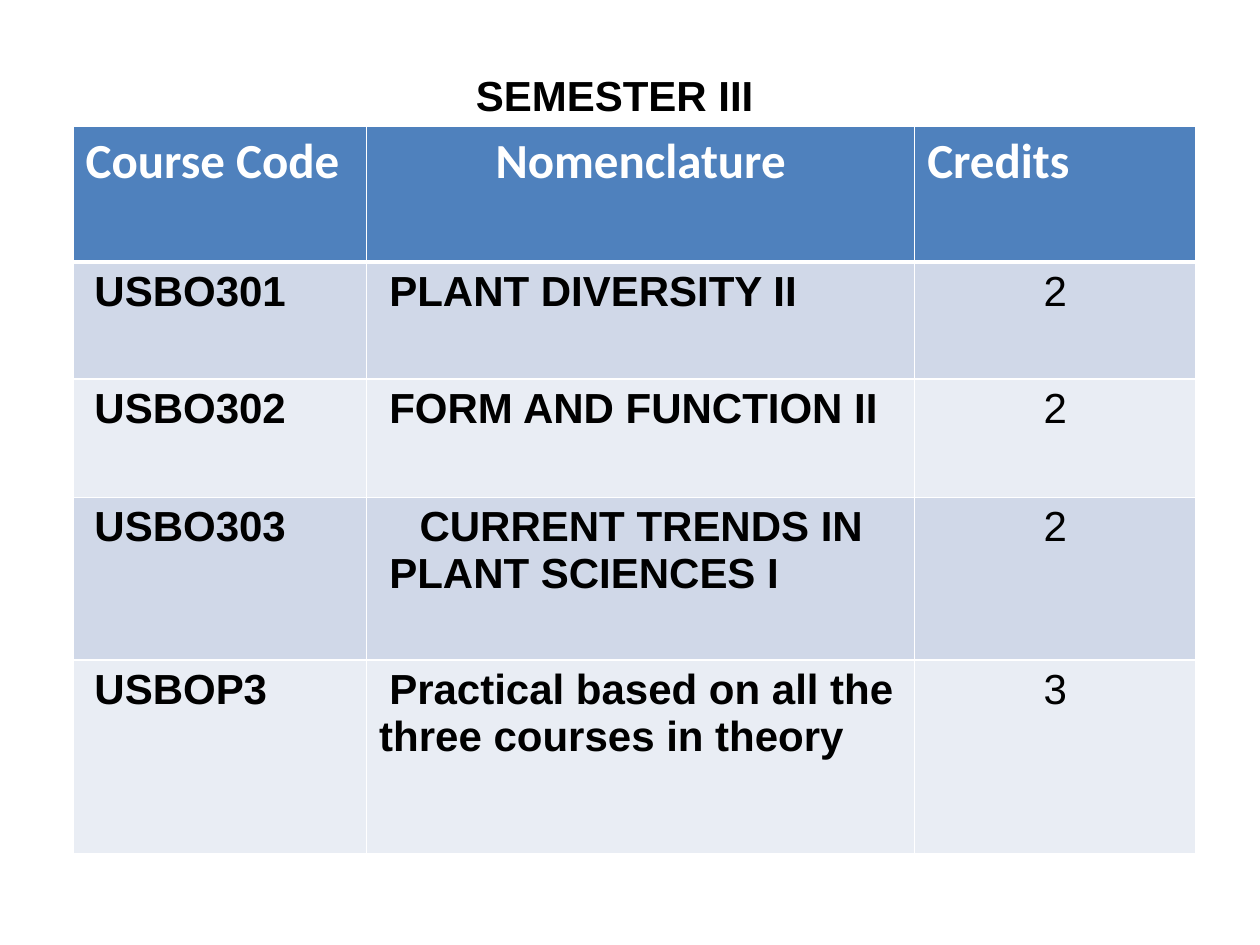
from lxml.etree import SubElement
from pptx import Presentation
from pptx.dml.color import RGBColor as Rgb
from pptx.enum.text import MSO_ANCHOR as Anchor, PP_ALIGN as Align
from pptx.oxml.ns import qn
from pptx.util import Inches, Pt

COLOURS = {"header": "4F81BD", "band_dark": "D0D8E8", "band_light": "E9EDF4",
           "white": "FFFFFF", "black": "000000"}
WIDTH, HEIGHT = 10, 7.5
COLUMN_WIDTHS = [2.33, 4.35, 2.23]
ROW_HEIGHTS = [1.08, 0.93, 0.94, 1.29, 1.54]
HEADINGS = [("Course Code", Align.LEFT), ("Nomenclature", Align.CENTER),
            ("Credits", Align.LEFT)]
# Code, name, credits, left margin and first-line indent of the name
COURSES = [
    ("USBO301", "PLANT DIVERSITY II", "2", 0.18, 0),
    ("USBO302", "FORM AND FUNCTION II", "2", 0.18, 0),
    ("USBO303", "CURRENT TRENDS IN PLANT SCIENCES I", "2", 0.18, 0.24),
    ("USBOP3", "Practical based on all the three courses in theory", "3", 0.1, 0.08),
]


class SlideBuilder:
    def __init__(self, deck):
        self.page = deck.slides.add_slide(deck.slide_layouts[6])
        self.body_font, self.body_size = "Arial", 24
        self.header_font, self.header_size = "Calibri", 28

    def add_text(self, frame, text, align, header=False, bold=True, indent=0):
        frame.word_wrap = True
        para = frame.paragraphs[0]
        para.alignment = align
        if indent:
            para._p.get_or_add_pPr().set("indent", str(Inches(indent)))
        span = para.add_run()
        span.text = text
        span.font.name = self.header_font if header else self.body_font
        span.font.size = Pt(self.header_size if header else self.body_size)
        span.font.bold = bold
        span.font.color.rgb = Rgb.from_string(COLOURS["white" if header else "black"])

    def title(self, text, left, top, width, height):
        """Place a centred title, with lengths as shares of the slide."""
        box = self.page.shapes.add_textbox(
            Inches(left * WIDTH), Inches(top * HEIGHT),
            Inches(width * WIDTH), Inches(height * HEIGHT))
        self.add_text(box.text_frame, text, Align.CENTER)

    def table(self, left, top, widths, heights):
        """Add an empty table, with left and top as shares of the slide."""
        grid = self.page.shapes.add_table(
            len(heights), len(widths), Inches(left * WIDTH), Inches(top * HEIGHT),
            Inches(sum(widths)), Inches(sum(heights))).table
        for column, width in zip(grid.columns, widths):
            column.width = Inches(width)
        for row, height in zip(grid.rows, heights):
            row.height = Inches(height)
        return grid

    def borders(self, cell, top, bottom):
        props = cell._tc.get_or_add_tcPr()
        sides = [("lnL", 1), ("lnR", 1), ("lnT", top), ("lnB", bottom)]
        for position, (side, points) in enumerate(sides):
            line = SubElement(props, qn(f"a:{side}"), w=str(Pt(points)))
            fill = SubElement(line, qn("a:solidFill"))
            SubElement(fill, qn("a:srgbClr"), val=COLOURS["white"])
            props.insert(position, line)

    def cell(self, cell, text, fill, align=Align.LEFT, margin=0.1, top=1, bottom=1, **style):
        cell.fill.solid()
        cell.fill.fore_color.rgb = Rgb.from_string(COLOURS[fill])
        cell.margin_left = Inches(margin)
        cell.vertical_anchor = Anchor.TOP
        self.borders(cell, top, bottom)
        self.add_text(cell.text_frame, text, align, **style)


def main():
    deck = Presentation()
    deck.slide_width, deck.slide_height = Inches(WIDTH), Inches(HEIGHT)
    builder = SlideBuilder(deck)
    builder.title("SEMESTER III ", 0.325, 0.5 / HEIGHT, 0.335, 0.5 / HEIGHT)
    grid = builder.table(0.058, 1 / HEIGHT, COLUMN_WIDTHS, ROW_HEIGHTS)
    for column, (heading, align) in enumerate(HEADINGS):
        builder.cell(grid.cell(0, column), heading, "header", align, bottom=3, header=True)
    for row, (code, name, credit, margin, indent) in enumerate(COURSES, start=1):
        band = {"fill": "band_dark" if row % 2 else "band_light",
                "top": 3 if row == 1 else 1}
        builder.cell(grid.cell(row, 0), code, margin=0.17, **band)
        builder.cell(grid.cell(row, 1), name, margin=margin, indent=indent, **band)
        builder.cell(grid.cell(row, 2), credit, align=Align.CENTER, bold=False, **band)
    deck.save("out.pptx")


if __name__ == "__main__":
    main()
